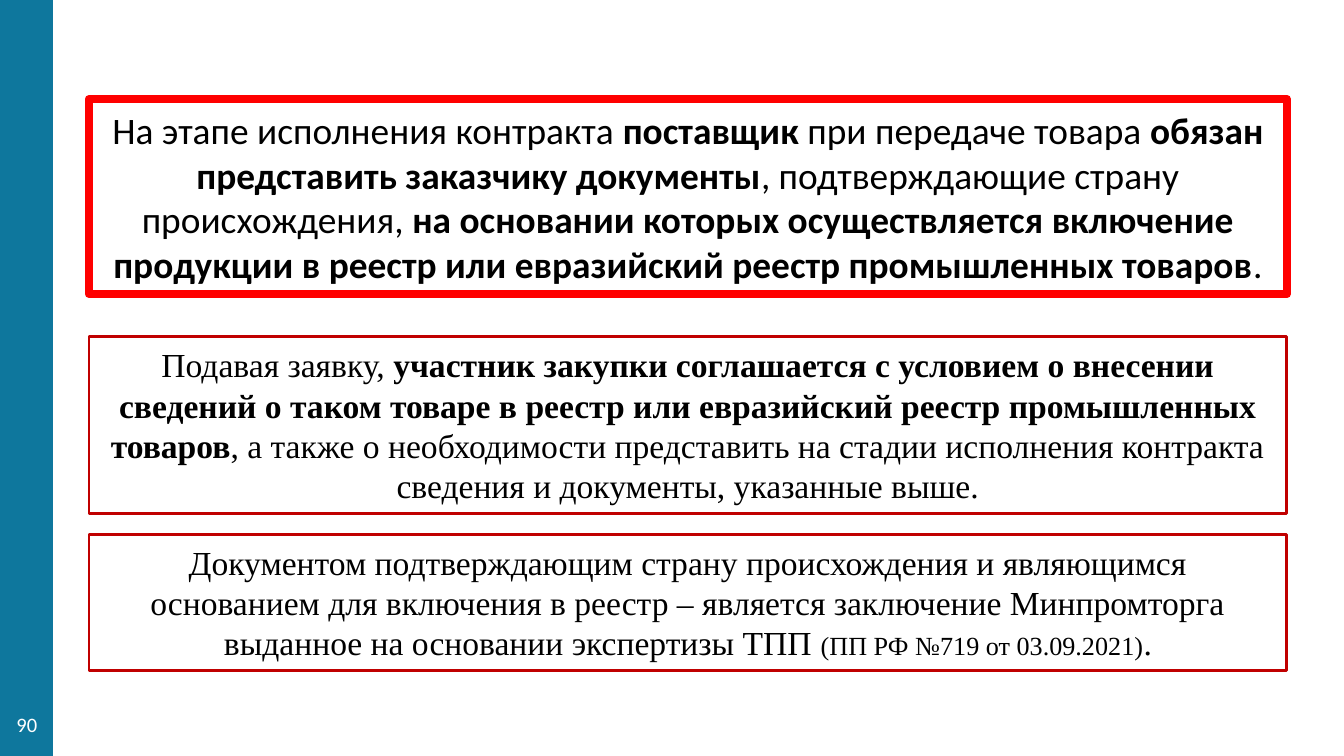
from pptx import Presentation
from pptx.dml.color import RGBColor
from pptx.enum.shapes import MSO_SHAPE
from pptx.enum.text import MSO_ANCHOR, PP_ALIGN
from pptx.util import Emu, Pt

PX = 5715  # EMU in one px, 160 px to the inch
WIDTH, HEIGHT = 1600, 900
BOX_LEFT, BOX_WIDTH = 106, 1426
BLANK_LAYOUT = 6

SUPPLIER_DUTY = [
    ("На этапе исполнения контракта ", {}),
    ("поставщик", {"bold": True}),
    (" при передаче товара ", {}),
    ("обязан представить заказчику документы", {"bold": True}),
    (", подтверждающие страну происхождения, ", {}),
    ("на основании которых осуществляется включение продукции в реестр "
     "или евразийский реестр промышленных товаров", {"bold": True}),
    (".", {}),
]
BIDDER_CONSENT = [
    ("Подавая заявку, ", {}),
    ("участник закупки соглашается с условием о внесении сведений о таком "
     "товаре в реестр или евразийский реестр промышленных товаров", {"bold": True}),
    (", а также о необходимости представить на стадии исполнения контракта "
     "сведения и документы, указанные выше.", {}),
]
ORIGIN_DOCUMENT = [
    ("Документом подтверждающим страну происхождения и являющимся основанием "
     "для включения в реестр – является заключение Минпромторга выданное на "
     "основании экспертизы ТПП ", {}),
    ("(ПП РФ №719 от 03.09.2021)", {"size": Pt(14)}),
    (".", {}),
]


def px(*lengths):
    return [Emu(length * PX) for length in lengths]


def rgb(color):
    return RGBColor.from_string(color)


def write(frame, runs, font_name, size, color):
    """Fill the frame with one centred paragraph of (text, font overrides) runs."""
    frame.word_wrap = True
    frame.vertical_anchor = MSO_ANCHOR.MIDDLE
    paragraph = frame.paragraphs[0]
    paragraph.alignment = PP_ALIGN.CENTER
    paragraph.font.name = font_name
    paragraph.font.size = Pt(size)
    paragraph.font.color.rgb = rgb(color)
    for text, overrides in runs:
        run = paragraph.add_run()
        run.text = text
        for attribute, value in overrides.items():
            setattr(run.font, attribute, value)


def add_side_band(slide):
    band = slide.shapes.add_shape(MSO_SHAPE.RECTANGLE, *px(0, 0, 63, HEIGHT))
    band.shadow.inherit = False
    band.fill.solid()
    band.fill.fore_color.rgb = rgb("0E779D")
    band.line.fill.background()


def add_page_number(slide, number):
    label = slide.shapes.add_textbox(*px(0, 838, 64, 48))
    frame = label.text_frame
    frame.margin_left = frame.margin_right = 0
    write(frame, [(number, {})], "Calibri", 11, "FFFFFF")


def add_framed_text(slide, top, height, runs, font_name, size, border, border_width):
    box = slide.shapes.add_shape(
        MSO_SHAPE.RECTANGLE, *px(BOX_LEFT, top, BOX_WIDTH, height))
    box.shadow.inherit = False
    box.fill.background()
    box.line.color.rgb = rgb(border)
    box.line.width = Pt(border_width)
    write(box.text_frame, runs, font_name, size, "000000")


def main():
    presentation = Presentation()
    presentation.slide_width, presentation.slide_height = px(WIDTH, HEIGHT)
    slide = presentation.slides.add_slide(presentation.slide_layouts[BLANK_LAYOUT])

    add_side_band(slide)
    add_page_number(slide, "90")
    add_framed_text(slide, 118, 232, SUPPLIER_DUTY, "Calibri", 20, "FF0000", 4.5)
    for top, height, runs in ((401, 210, BIDDER_CONSENT), (636, 162, ORIGIN_DOCUMENT)):
        add_framed_text(slide, top, height, runs, "Times New Roman", 18, "C00000", 1.5)

    presentation.save("out.pptx")


if __name__ == "__main__":
    main()
